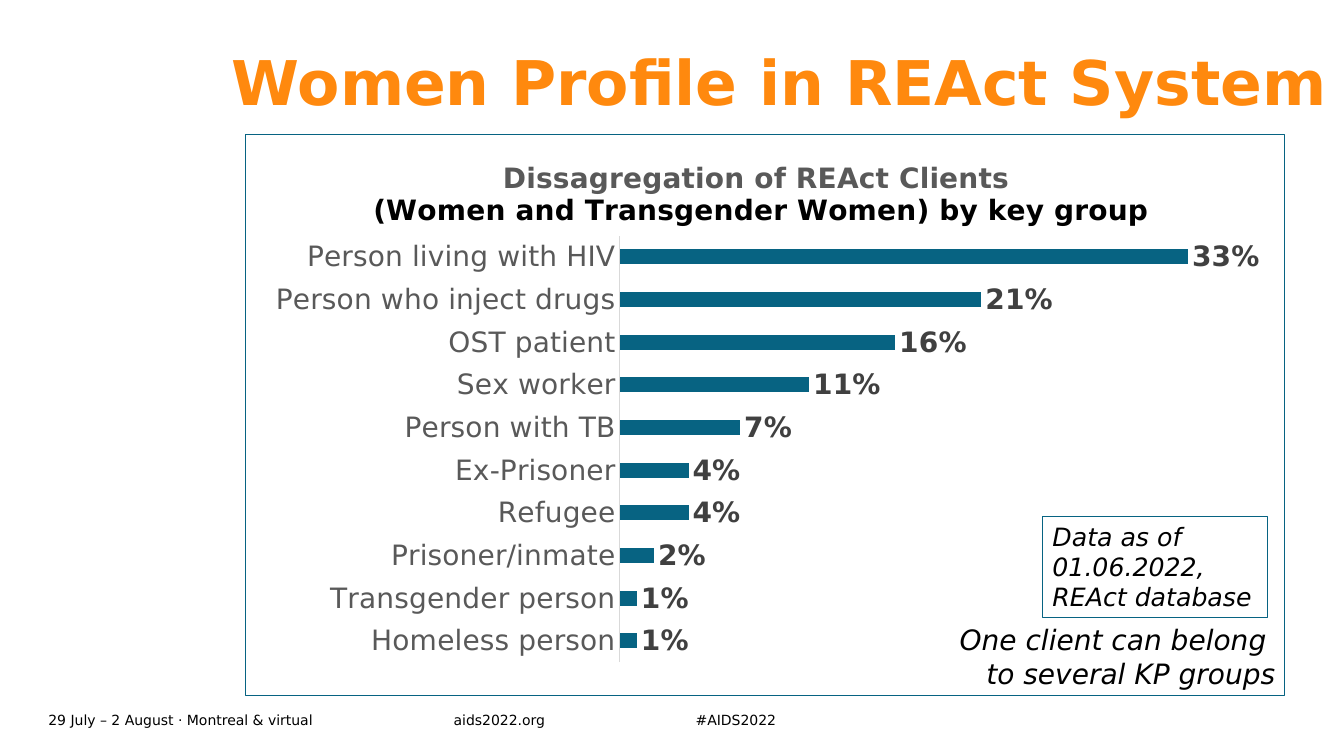
from lxml import etree
from pptx import Presentation
from pptx.chart.data import CategoryChartData
from pptx.dml.color import RGBColor
from pptx.enum.chart import XL_CHART_TYPE, XL_LABEL_POSITION, XL_TICK_MARK
from pptx.enum.shapes import MSO_SHAPE
from pptx.enum.text import MSO_ANCHOR, PP_ALIGN
from pptx.oxml import parse_xml
from pptx.oxml.ns import nsdecls, qn
from pptx.util import Inches, Pt

FONT = "DejaVu Sans"
ORANGE = RGBColor(0xFF, 0x89, 0x0E)
TEAL = RGBColor(0x07, 0x63, 0x82)
BLACK = RGBColor(0, 0, 0)
GREY = RGBColor(0x59, 0x59, 0x59)
DARK_GREY = RGBColor(0x40, 0x40, 0x40)
LIGHT_GREY = RGBColor(0xD9, 0xD9, 0xD9)

HEADLINE = "Women Profile in REAct System"
CHART_TITLE = [
    ("Dissagregation of REAct Clients ", GREY),
    ("(Women and Transgender Women) by key group", BLACK),
]
KEY_GROUPS = [  # from the bottom bar up
    ("Homeless person", 0.01),
    ("Transgender person", 0.01),
    ("Prisoner/inmate", 0.02),
    ("Refugee", 0.04),
    ("Ex-Prisoner", 0.04),
    ("Person with TB", 0.07),
    ("Sex worker", 0.11),
    ("OST patient", 0.16),
    ("Person who inject drugs", 0.21),
    ("Person living with HIV", 0.33),
]
OVERLAP_NOTE = ["One client can belong ", "to several KP groups"]
DATA_NOTE = ["Data as of 01.06.2022,", "REAct database"]
FOOTERS = [  # text, left, width
    ("29 July – 2 August · Montreal & virtual", 0.48, 4.02),
    ("aids2022.org", 4.5, 1.93),
    ("#AIDS2022", 6.9, 1.93),
]


def style(font, size, color, bold=False, italic=False):
    font.name = FONT
    font.size = Pt(size)
    font.bold = bold
    font.italic = italic
    font.color.rgb = color


def write_lines(frame, lines, size, align=PP_ALIGN.LEFT, italic=False):
    frame.text = "\n".join(lines)
    for paragraph in frame.paragraphs:
        paragraph.alignment = align
        for run in paragraph.runs:
            style(run.font, size, BLACK, italic=italic)


def remove_margins(frame):
    frame.margin_left = frame.margin_right = 0
    frame.margin_top = frame.margin_bottom = 0


def set_layout(element, position, **fractions):
    """Place a chart part by fractions of the chart area."""
    layout = element.find(qn("c:layout"))
    if layout is None:
        layout = etree.Element(qn("c:layout"))
        element.insert(position, layout)
    manual = etree.SubElement(layout, qn("c:manualLayout"))
    for tag, value in fractions.items():
        etree.SubElement(manual, qn(f"c:{tag}")).set("val", str(value))


def add_headline(slide):
    title = slide.shapes.title
    title.left, title.top = Inches(2.3), Inches(0.52)
    title.width, title.height = Inches(11.7), Inches(1.34)
    frame = title.text_frame
    remove_margins(frame)
    frame.vertical_anchor = MSO_ANCHOR.TOP
    frame.text = HEADLINE
    paragraph = frame.paragraphs[0]
    paragraph.alignment = PP_ALIGN.LEFT
    paragraph.line_spacing = 0.9
    style(paragraph.runs[0].font, 44, ORANGE, bold=True)


def add_key_group_chart(slide):
    data = CategoryChartData(number_format="0%")
    data.categories = [group for group, _ in KEY_GROUPS]
    data.add_series("Series 1", [share for _, share in KEY_GROUPS])
    chart = slide.shapes.add_chart(
        XL_CHART_TYPE.BAR_CLUSTERED, Inches(2.43), Inches(1.33),
        Inches(10.32), Inches(5.58), data).chart
    style(chart.font, 10, BLACK)
    chart.has_legend = False

    title_frame = chart.chart_title.text_frame
    title_frame.text = "\n".join(line for line, _ in CHART_TITLE)
    for paragraph, (_, color) in zip(title_frame.paragraphs, CHART_TITLE):
        style(paragraph.runs[0].font, 20, color, bold=True)

    group_axis = chart.category_axis
    group_axis.major_tick_mark = group_axis.minor_tick_mark = XL_TICK_MARK.NONE
    group_axis.format.line.color.rgb = LIGHT_GREY
    group_axis.format.line.width = Pt(0.75)
    style(group_axis.tick_labels.font, 20, GREY)

    share_axis = chart.value_axis
    share_axis.visible = False
    share_axis.has_major_gridlines = False
    share_axis.minimum_scale = 0
    share_axis.maximum_scale = 0.35

    plot = chart.plots[0]
    plot.gap_width = 182
    plot.vary_by_categories = False
    bars = plot.series[0].format.fill
    bars.solid()
    bars.fore_color.rgb = TEAL
    plot.has_data_labels = True
    labels = plot.data_labels
    labels.show_value = True
    labels.number_format = "0%"
    labels.number_format_is_linked = False
    labels.position = XL_LABEL_POSITION.OUTSIDE_END
    style(labels.font, 20, DARK_GREY, bold=True)

    chart_xml = chart.element.find(qn("c:chart"))
    set_layout(chart_xml.find(qn("c:title")), 1,
               xMode="edge", yMode="edge", x=0.12, y=0.04)
    set_layout(chart_xml.find(qn("c:plotArea")), 0, layoutTarget="inner",
               xMode="edge", yMode="edge", x=0.36, y=0.18, w=0.58, h=0.76)
    chart_xml.addnext(parse_xml(
        f'<c:spPr {nsdecls("c", "a")}><a:noFill/><a:ln w="{Pt(0.75)}">'
        f'<a:solidFill><a:srgbClr val="{TEAL}"/></a:solidFill></a:ln></c:spPr>'))


def add_notes_on_chart(slide):
    overlap = slide.shapes.add_textbox(
        Inches(9.41), Inches(6.13), Inches(3.34), Inches(0.77))
    overlap.text_frame.word_wrap = False
    write_lines(overlap.text_frame, OVERLAP_NOTE, 20, PP_ALIGN.RIGHT, italic=True)

    data_box = slide.shapes.add_shape(
        MSO_SHAPE.RECTANGLE, Inches(10.34), Inches(5.12), Inches(2.23), Inches(1.01))
    data_box.shadow.inherit = False
    data_box.fill.background()
    data_box.line.color.rgb = TEAL
    data_box.line.width = Pt(0.75)
    data_box.text_frame.word_wrap = True
    data_box.text_frame.vertical_anchor = MSO_ANCHOR.TOP
    write_lines(data_box.text_frame, DATA_NOTE, 18, italic=True)


def add_footers(slide):
    for text, left, width in FOOTERS:
        footer = slide.shapes.add_textbox(
            Inches(left), Inches(7.02), Inches(width), Inches(0.24))
        frame = footer.text_frame
        remove_margins(frame)
        frame.word_wrap = True
        frame.vertical_anchor = MSO_ANCHOR.MIDDLE
        write_lines(frame, [text], 10)


def main():
    deck = Presentation()
    deck.slide_width, deck.slide_height = Inches(13.33), Inches(7.5)
    slide = deck.slides.add_slide(deck.slide_layouts.get_by_name("Title Only"))
    add_footers(slide)
    add_headline(slide)
    add_key_group_chart(slide)
    add_notes_on_chart(slide)
    deck.save("out.pptx")


if __name__ == "__main__":
    main()
